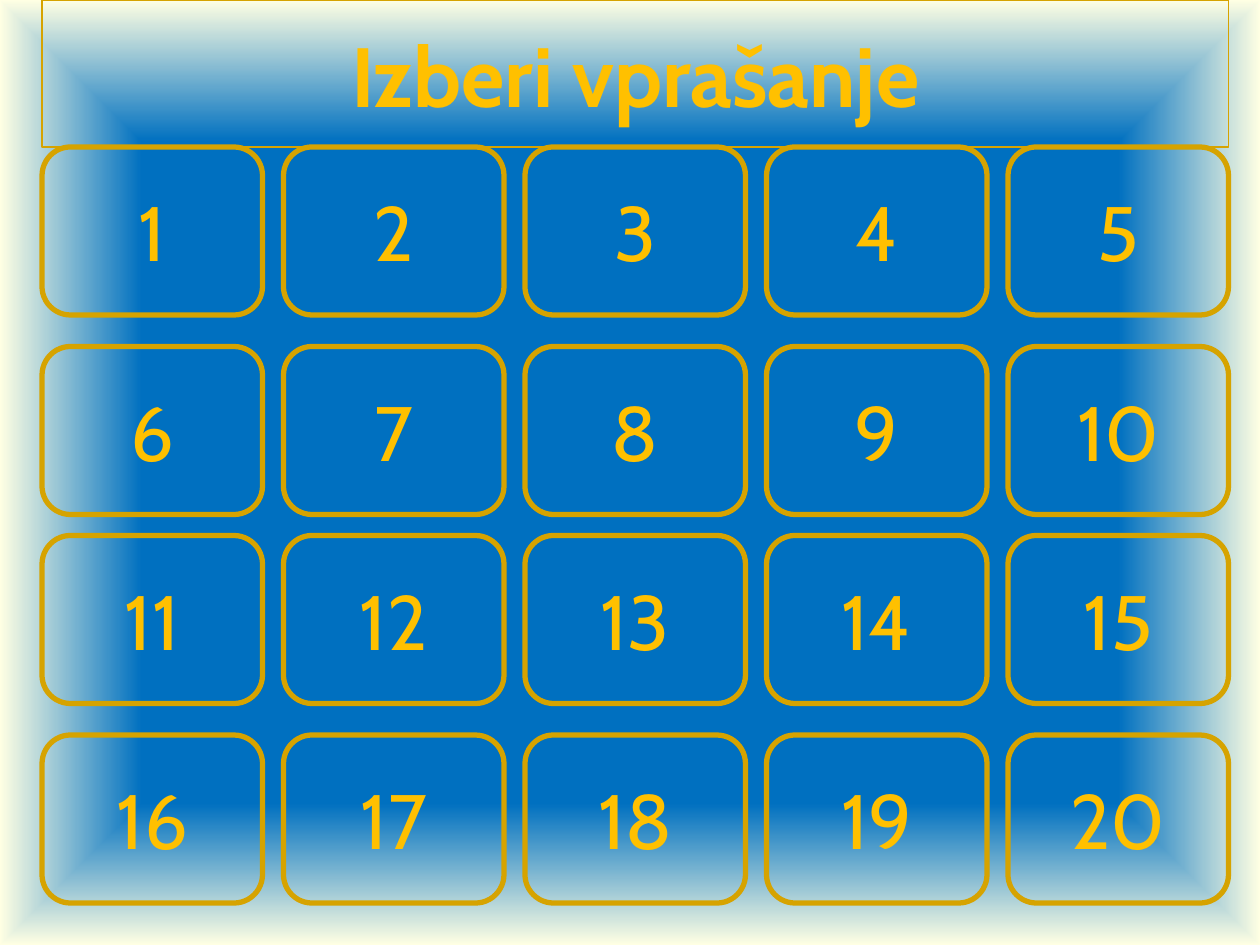
from lxml import etree
from pptx import Presentation
from pptx.dml.color import RGBColor
from pptx.enum import shapes, text
from pptx.oxml import parse_xml
from pptx.oxml.ns import nsdecls, qn
from pptx.util import Pt

BLUE, CREAM = "0070C0", "FFFFE3"
GOLD, DARK_GOLD = "FFC000", "D6A300"
FONT = "Cabin"

LEFT = 24
TITLE_WIDTH, TITLE_HEIGHT = 678, 84
BUTTON_WIDTH, BUTTON_HEIGHT = 126, 96
COLUMNS, COLUMN_PITCH = 5, 138
ROW_TOPS = (84, 198, 306, 420)


def colour(hex_code):
    return RGBColor.from_string(hex_code)


def paint_background(slide):
    """Fill the slide with blue that fades to cream at the edges."""
    slide.background.fill.gradient()
    gradient = slide.element.find(".//" + qn("a:gradFill"))
    for child in list(gradient):
        gradient.remove(child)
    stops = etree.SubElement(gradient, qn("a:gsLst"))
    for percent, shade in ((13, BLUE), (70, BLUE), (100, CREAM)):
        stop = etree.SubElement(stops, qn("a:gs"), pos=str(percent * 1000))
        etree.SubElement(stop, qn("a:srgbClr"), val=shade)
    gradient.append(parse_xml(
        f'<a:path {nsdecls("a")} path="shape">'
        '<a:fillToRect l="50000" t="50000" r="50000" b="50000"/></a:path>'))


def outline(shape, width):
    shape.fill.background()
    shape.line.color.rgb = colour(DARK_GOLD)
    shape.line.width = Pt(width)


def write_centred(shape, words, size, bold=False, wrap=True):
    frame = shape.text_frame
    frame.auto_size = text.MSO_AUTO_SIZE.NONE
    frame.word_wrap = wrap
    frame.vertical_anchor = text.MSO_ANCHOR.MIDDLE
    paragraph = frame.paragraphs[0]
    paragraph.alignment = text.PP_ALIGN.CENTER
    run = paragraph.add_run()
    run.text = words
    run.font.name = FONT
    run.font.size = Pt(size)
    run.font.bold = bold
    run.font.color.rgb = colour(GOLD)


def add_title(slide, words):
    title = slide.shapes.title
    title.left, title.top = Pt(LEFT), Pt(0)
    title.width, title.height = Pt(TITLE_WIDTH), Pt(TITLE_HEIGHT)
    outline(title, 0.75)
    write_centred(title, words, 48, bold=True)


def add_question_button(slide, number, left, top):
    button = slide.shapes.add_shape(
        shapes.MSO_SHAPE.ROUNDED_RECTANGLE,
        Pt(left), Pt(top), Pt(BUTTON_WIDTH), Pt(BUTTON_HEIGHT))
    button.adjustments[0] = 0.17
    button.shadow.inherit = False
    outline(button, 3)
    write_centred(button, str(number), 44, wrap=False)


def main():
    deck = Presentation()
    deck.slide_width, deck.slide_height = Pt(720), Pt(540)
    slide = deck.slides.add_slide(deck.slide_layouts.get_by_name("Title Only"))
    paint_background(slide)
    add_title(slide, "Izberi vprašanje")
    for row, top in enumerate(ROW_TOPS):
        for column in range(COLUMNS):
            number = row * COLUMNS + column + 1
            add_question_button(slide, number, LEFT + column * COLUMN_PITCH, top)
    deck.save("out.pptx")


if __name__ == "__main__":
    main()
